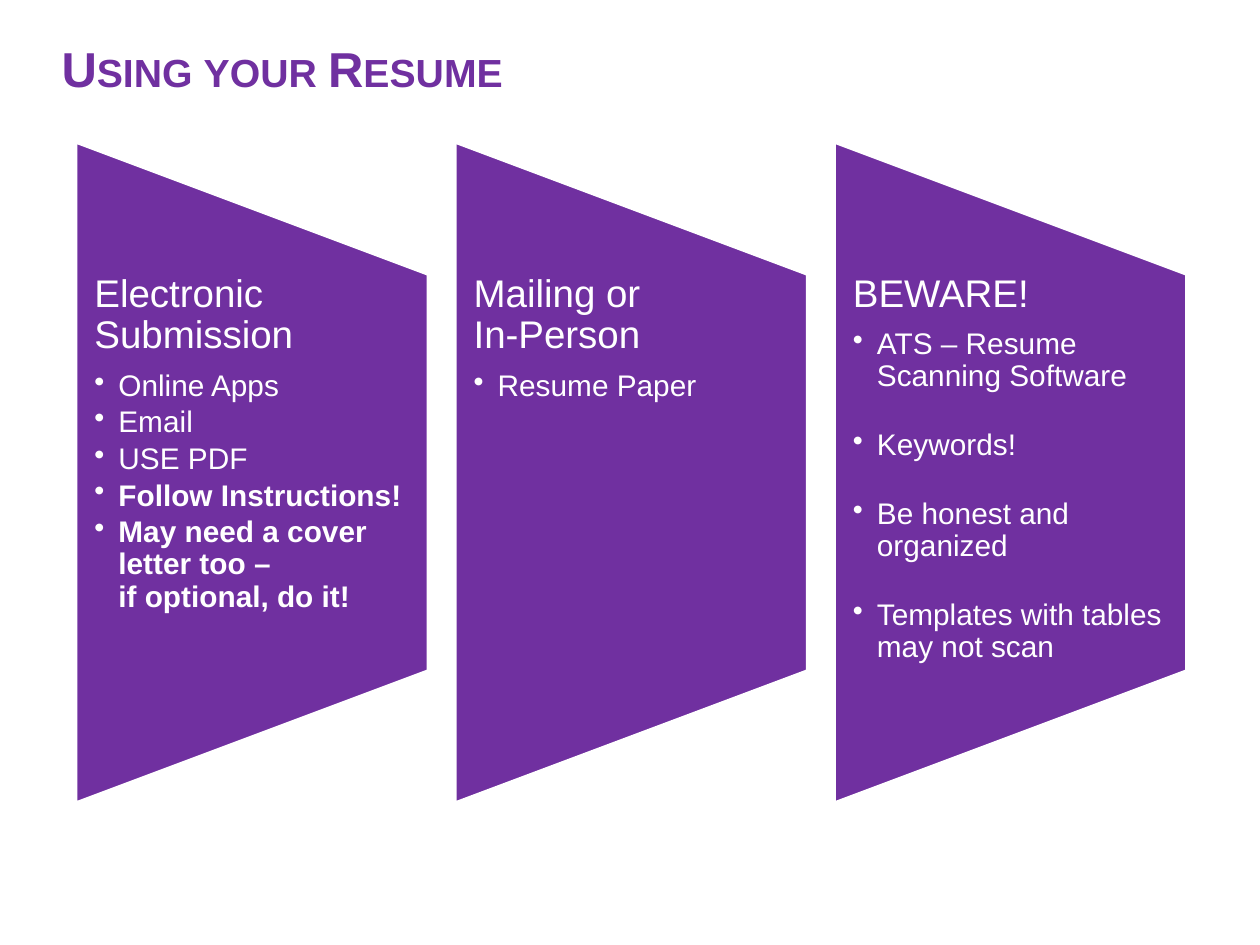
import pptx
import pptx.dml.color
import pptx.enum.shapes
import pptx.enum.text
import pptx.oxml
import pptx.oxml.ns
import pptx.util

Inches = pptx.util.Inches
Pt = pptx.util.Pt

TITLE = "Using your Resume"
PURPLE, WHITE = "7030A0", "FFFFFF"
PANELS = [
    {"heading": "Electronic Submission", "gap": 2.55, "points": [
        ("Online Apps", False),
        ("Email", False),
        ("USE PDF", False),
        ("Follow Instructions!", True),
        ("May need a cover letter too –\vif optional, do it!", True)]},
    {"heading": "Mailing or\vIn-Person", "gap": 2.55, "points": [
        ("Resume Paper", False)]},
    {"heading": "BEWARE!", "gap": 21, "points": [
        ("ATS – Resume Scanning Software", False),
        ("Keywords!", False),
        ("Be honest and organized", False),
        ("Templates with tables may not scan", False)]},
]
SLIDE_WIDTH, SLIDE_HEIGHT = 10, 7.5
PANEL_WIDTH, PANEL_HEIGHT = 2.8, 0.7 * SLIDE_HEIGHT
TEXT_HEIGHT = 0.6 * PANEL_HEIGHT
FIRST_CENTER, PITCH = 2, 3.01
MIDDLE = SLIDE_HEIGHT / 2


def color(value):
    return pptx.dml.color.RGBColor.from_string(value)


def centered(x, width, height):
    return [Inches(n) for n in (x - width / 2, MIDDLE - height / 2, width, height)]


def style(para, size, bold, value):
    for span in para.runs:
        span.font.name = "Arial"
        span.font.size = Pt(size)
        span.font.bold = bold
        span.font.color.rgb = color(value)


def add_bullet(para):
    properties = para._p.get_or_add_pPr()
    properties.set("marL", str(Inches(0.19)))
    properties.set("indent", str(-Inches(0.19)))
    bullet = pptx.oxml.parse_xml(
        f'<a:buChar {pptx.oxml.ns.nsdecls("a")} char="•"/>')
    properties.append(bullet)


def add_title(page):
    box = page.shapes.add_textbox(Inches(0.39), Inches(0.19), Inches(7.07), Inches(0.63))
    frame = box.text_frame
    frame.word_wrap = True
    frame.vertical_anchor = pptx.enum.text.MSO_ANCHOR.BOTTOM
    frame.text = TITLE
    para = frame.paragraphs[0]
    style(para, 28, True, PURPLE)
    para.runs[0].font._element.set("cap", "small")


def add_panel(page, center, panel):
    shape = page.shapes.add_shape(
        pptx.enum.shapes.MSO_SHAPE.FLOWCHART_MANUAL_OPERATION,
        *centered(center, PANEL_HEIGHT, PANEL_WIDTH))
    shape.rotation = 270
    shape.shadow.inherit = False
    shape.fill.solid()
    shape.fill.fore_color.rgb = color(PURPLE)
    shape.line.color.rgb = color(WHITE)
    shape.line.width = Pt(2)

    box = page.shapes.add_textbox(*centered(center, PANEL_WIDTH, TEXT_HEIGHT))
    frame = box.text_frame
    frame.word_wrap = True
    frame.margin_left = frame.margin_right = Inches(0.15)
    frame.margin_top = frame.margin_bottom = 0
    heading = frame.paragraphs[0]
    heading.text = panel["heading"]
    heading.line_spacing = 0.9
    heading.space_after = Pt(7.7)
    style(heading, 22, False, WHITE)
    for text, bold in panel["points"]:
        para = frame.add_paragraph()
        para.text = text
        para.level = 1
        add_bullet(para)
        para.line_spacing = 0.9
        para.space_after = Pt(panel["gap"])
        style(para, 17, bold, WHITE)


def main():
    deck = pptx.Presentation()
    deck.slide_width = Inches(SLIDE_WIDTH)
    deck.slide_height = Inches(SLIDE_HEIGHT)
    page = deck.slides.add_slide(deck.slide_layouts[6])
    add_title(page)
    for column, panel in enumerate(PANELS):
        add_panel(page, FIRST_CENTER + column * PITCH, panel)
    deck.save("out.pptx")


if __name__ == "__main__":
    main()
